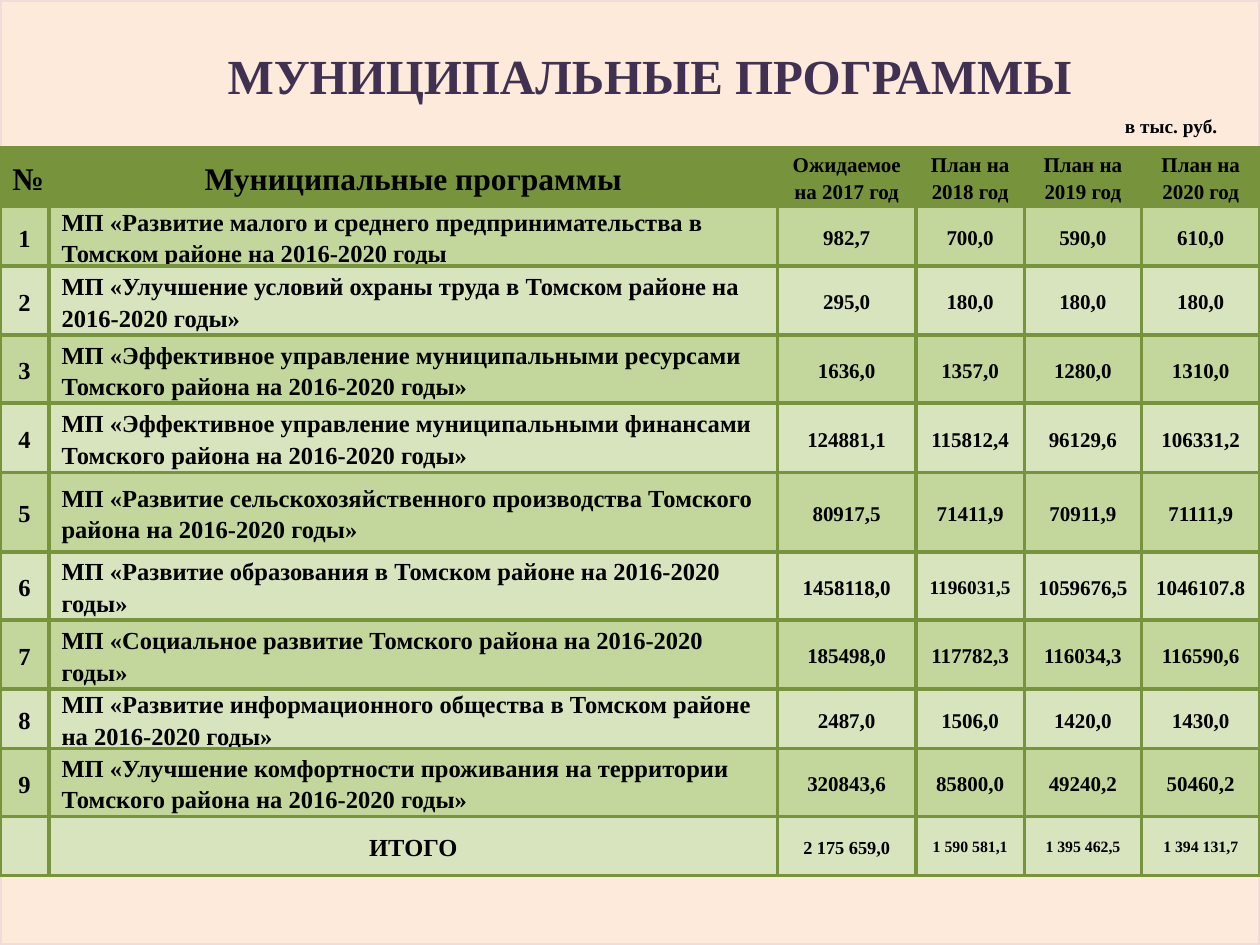
from itertools import pairwise
from pptx import Presentation
from pptx.dml.color import RGBColor
from pptx.enum import shapes, text
from pptx.oxml import parse_xml
from pptx.util import Inches, Pt

NS = "http://schemas.openxmlformats.org/drawingml/2006/main"
GREEN, LIGHT, PALE = "77933C", "C3D69B", "D7E4BD"
CENTER, LEFT = text.PP_ALIGN.CENTER, text.PP_ALIGN.LEFT


def add_box(kind, left, top, width, height, fill, line):
    sp = s.shapes.add_shape(kind, Inches(left), Inches(top), Inches(width), Inches(height))
    sp.shadow.inherit = False
    sp.fill.solid()
    sp.fill.fore_color.rgb = RGBColor.from_string(fill)
    sp.line.color.rgb = RGBColor.from_string(line)
    sp.line.width = Pt(2)
    return sp


def write(tf, words, size, color="000000", align=CENTER, spacing=1.0):
    p = tf.paragraphs[0]
    p.alignment = align
    p.line_spacing = spacing
    r = p.add_run()
    r.text = words
    for name, value in {"name": "Times New Roman", "size": Pt(size), "bold": True}.items():
        setattr(r.font, name, value)
    r.font.color.rgb = RGBColor.from_string(color)
    return r


prs = Presentation()
prs.slide_width, prs.slide_height = Inches(10), Inches(7.5)
s = prs.slides.add_slide(prs.slide_layouts[5])

backdrop = add_box(shapes.MSO_SHAPE.FLOWCHART_PROCESS, 0, 0, 10, 7.5, "FDEADA", "F2DCDB")
s.shapes._spTree.insert(2, backdrop._element)

title = s.shapes.title
title_box = {"left": 0.31, "top": 0.31, "width": 9.69, "height": 0.57}
for name, value in title_box.items():
    setattr(title, name, Inches(value))
title.text_frame.vertical_anchor = text.MSO_ANCHOR.TOP
r = write(title.text_frame, "МУНИЦИПАЛЬНЫЕ ПРОГРАММЫ", 28, "403152")
r.font._element.insert(0, parse_xml(
    f'<a:ln xmlns:a="{NS}" w="9000"><a:solidFill><a:srgbClr val="5E457C"/></a:solidFill></a:ln>'))

unit = s.shapes.add_textbox(Inches(8.83), Inches(0.86), Inches(1.3), Inches(0.29))
unit.text_frame.word_wrap = True
write(unit.text_frame, "в тыс. руб.", 11, align=LEFT)

rows = [
    ("№", "Муниципальные программы", "Ожидаемое на 2017 год",
     "План на 2018 год", "План на 2019 год", "План на 2020 год"),
    ("1", "МП «Развитие малого и среднего предпринимательства в Томском районе на 2016-2020 годы",
     "982,7", "700,0", "590,0", "610,0"),
    ("2", "МП «Улучшение условий охраны труда в Томском районе на 2016-2020 годы»",
     "295,0", "180,0", "180,0", "180,0"),
    ("3", "МП «Эффективное управление муниципальными ресурсами Томского района на 2016-2020 годы»",
     "1636,0", "1357,0", "1280,0", "1310,0"),
    ("4", "МП «Эффективное управление муниципальными финансами Томского района на 2016-2020 годы»",
     "124881,1", "115812,4", "96129,6", "106331,2"),
    ("5", "МП «Развитие сельскохозяйственного производства Томского района на 2016-2020 годы»",
     "80917,5", "71411,9", "70911,9", "71111,9"),
    ("6", "МП «Развитие образования в Томском районе на 2016-2020 годы»",
     "1458118,0", "1196031,5", "1059676,5", "1046107.8"),
    ("7", "МП «Социальное развитие Томского района на 2016-2020 годы»",
     "185498,0", "117782,3", "116034,3", "116590,6"),
    ("8", "МП «Развитие информационного общества в Томском районе на 2016-2020 годы»",
     "2487,0", "1506,0", "1420,0", "1430,0"),
    ("9", "МП «Улучшение комфортности проживания на территории Томского района на 2016-2020 годы»",
     "320843,6", "85800,0", "49240,2", "50460,2"),
    ("", "ИТОГО", "2 175 659,0", "1 590 581,1", "1 395 462,5", "1 394 131,7"),
]
col_edges = [0, 0.39, 6.17, 7.27, 8.13, 9.06, 10]
row_edges = [1.17, 1.64, 2.11, 2.66, 3.2, 3.75, 4.38, 4.92, 5.47, 5.94, 6.48, 6.95]
special_sizes = {(6, 3): 11, (10, 2): 10.5, (10, 3): 9, (10, 4): 9, (10, 5): 9}

for i, (values, (top, bottom)) in enumerate(zip(rows, pairwise(row_edges))):
    fill = GREEN if i == 0 else LIGHT if i % 2 else PALE
    for j, (value, (left, right)) in enumerate(zip(values, pairwise(col_edges))):
        cell = add_box(shapes.MSO_SHAPE.RECTANGLE, left, top, right - left, bottom - top,
                       fill, GREEN)
        if value:
            tf = cell.text_frame
            tf.word_wrap = True
            tf.vertical_anchor = text.MSO_ANCHOR.MIDDLE
            base = 12 if j > 1 else 14 if i else 18
            align = LEFT if j == 1 and 0 < i < 10 else CENTER
            write(tf, value, special_sizes.get((i, j), base), align=align, spacing=1.07)

prs.save("out.pptx")
